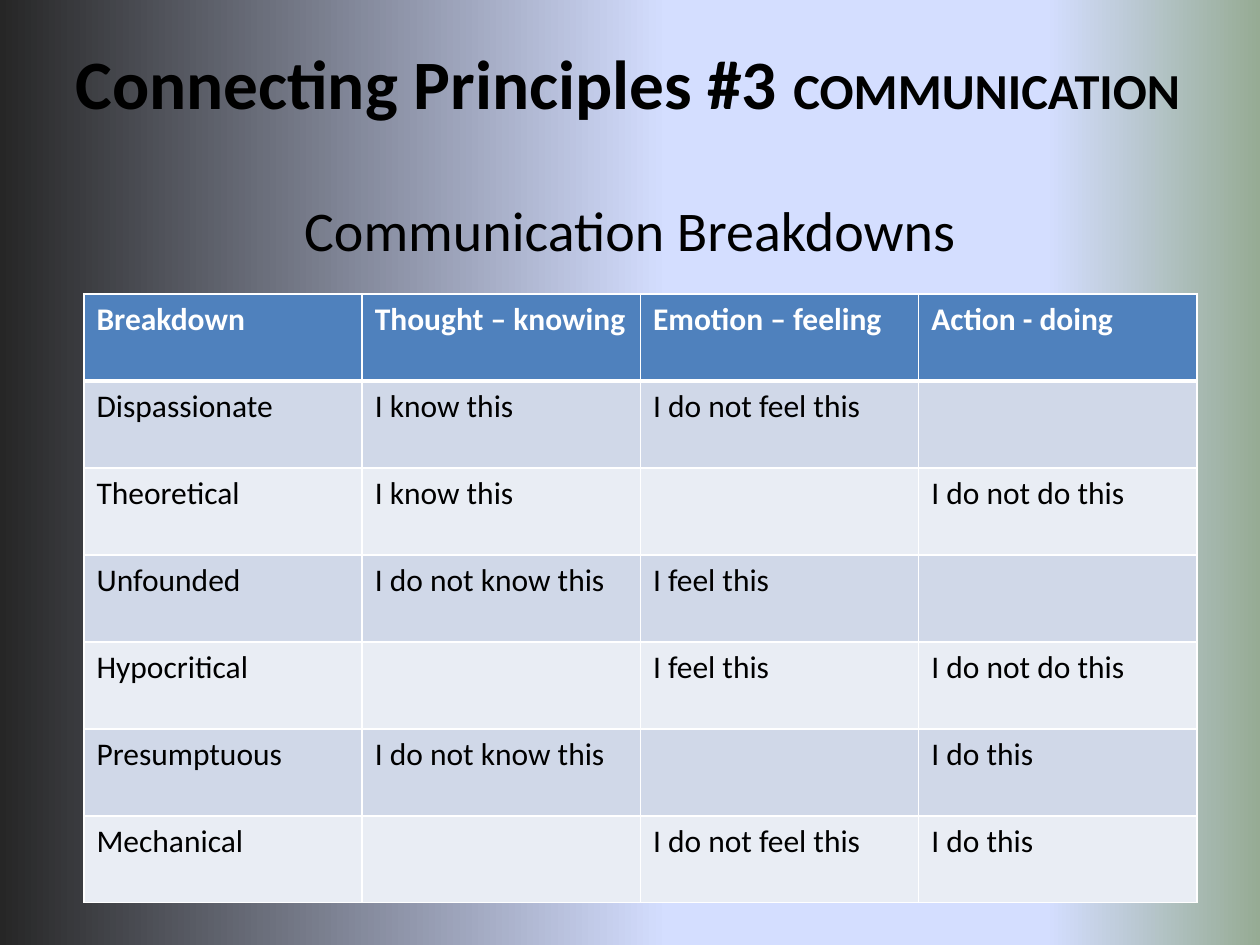
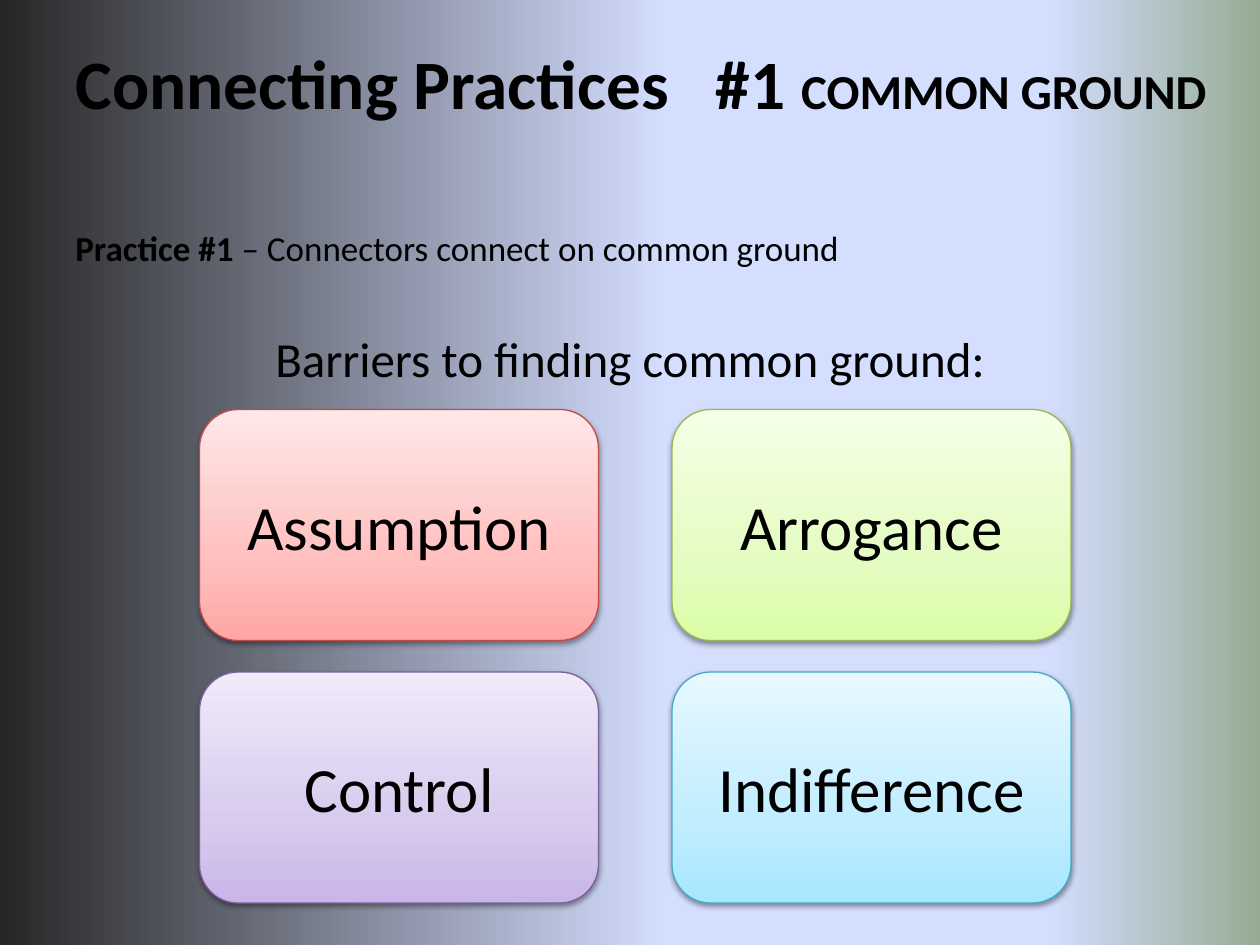
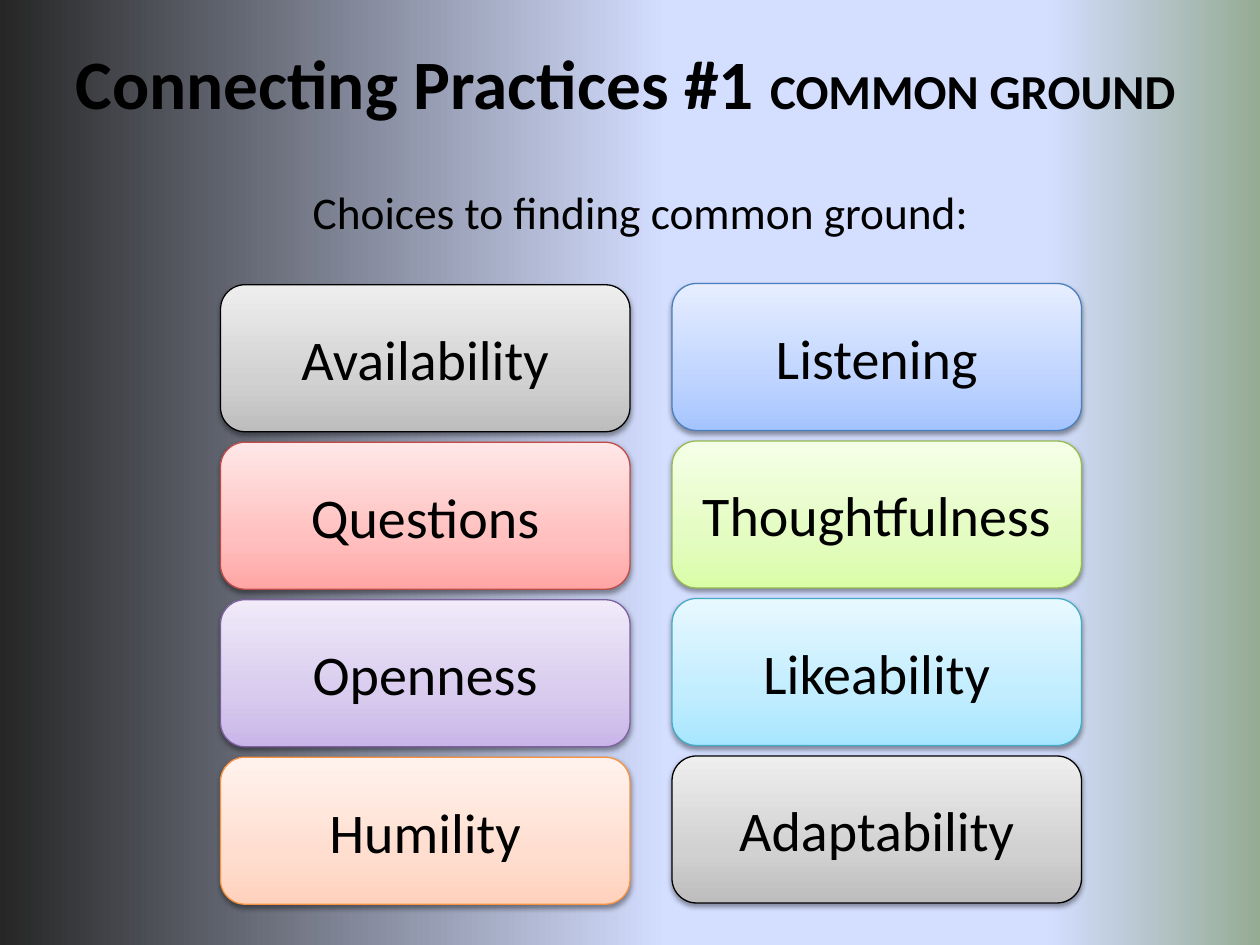
import collections

import pptx
import pptx.dml.color
import pptx.enum.shapes
import pptx.enum.text
import pptx.oxml
import pptx.oxml.ns
import pptx.util
from lxml import etree

# The slide is laid out on a grid of 120 columns by 90 rows.
COLUMNS, ROWS = 120, 90
UNIT = pptx.util.Inches(10) / COLUMNS

FONT = "Calibri"
BLACK, WHITE = "000000", "FFFFFF"
HEADER_FILL = "4F81BD"
BAND_FILLS = ("D0D8E8", "E9EDF4")
BACKDROP = ((0, "262626"), (53, "D4DEFF"), (83, "D4DEFF"), (100, "96AB94"))

Box = collections.namedtuple("Box", "left top width height")
Span = collections.namedtuple("Span", "text size bold", defaults=(False,))
Palette = collections.namedtuple("Palette", "dark middle light line")

GRAY = Palette("BDBDBD", "D1D1D1", "EEEEEE", "000000")
BLUE = Palette("A4C4FF", "BFD4FF", "E6EEFF", "4B7EBC")
RED = Palette("FFA6A5", "FFC0BF", "FFE7E7", "BF4C48")
GREEN = Palette("DAFDA7", "E4FCC2", "F5FFE7", "98B955")
PURPLE = Palette("C9B5E8", "D8CBEE", "F0EAF9", "7D60A0")
AQUA = Palette("A7E6FF", "C1EDFF", "E7F8FF", "46AAC5")
ORANGE = Palette("FFD2BD", "FFDED0", "FFF2ED", "F69240")

BREAKDOWNS = (
    ("Breakdown", "Thought – knowing", "Emotion – feeling", "Action - doing"),
    ("Dispassionate", "I know this", "I do not feel this", ""),
    ("Theoretical", "I know this", "", "I do not do this"),
    ("Unfounded", "I do not know this", "I feel this", ""),
    ("Hypocritical", "", "I feel this", "I do not do this"),
    ("Presumptuous", "I do not know this", "", "I do this"),
    ("Mechanical", "", "I do not feel this", "I do this"),
)


def color(value):
    return pptx.dml.color.RGBColor.from_string(value)


def lengths(box):
    """Turn a box in grid units into slide lengths."""
    return [round(value * UNIT) for value in box]


def drawing_xml(markup):
    """Parse one drawing element whose root carries the a: prefix."""
    name, rest = markup[1:].split(" ", 1)
    return pptx.oxml.parse_xml(f"<{name} {pptx.oxml.ns.nsdecls('a')} {rest}")


def set_gradient(fill, parent, stops, angle):
    fill.gradient()
    gradient = next(parent.iter(pptx.oxml.ns.qn("a:gradFill")))
    for child in list(gradient):
        gradient.remove(child)
    stop_list = etree.SubElement(gradient, pptx.oxml.ns.qn("a:gsLst"))
    for position, value in stops:
        stop_list.append(drawing_xml(
            f'<a:gs pos="{position * 1000}"><a:srgbClr val="{value}"/></a:gs>'))
    gradient.append(drawing_xml(f'<a:lin ang="{angle * 60000}" scaled="0"/>'))


def format_run(run, size, bold=False, value=BLACK):
    run.font.name = FONT
    run.font.size = pptx.util.Pt(size)
    run.font.bold = bold
    run.font.color.rgb = color(value)


def add_spans(paragraph, spans):
    for span in spans:
        run = paragraph.add_run()
        run.text = span.text
        format_run(run, span.size, span.bold)


def add_text(slide, box):
    """Add an empty wrapping text box and return its text frame."""
    text_frame = slide.shapes.add_textbox(*lengths(box)).text_frame
    text_frame.word_wrap = True
    return text_frame


def add_title(slide, box, heading, topic, topic_size, tab=None):
    text_frame = add_text(slide, box)
    text_frame.vertical_anchor = pptx.enum.text.MSO_ANCHOR.MIDDLE
    paragraph = text_frame.paragraphs[0]
    add_spans(paragraph, (Span(heading, 39.6, True), Span(topic, topic_size, True)))
    if tab:
        tabs = drawing_xml(f'<a:tabLst ><a:tab pos="{round(tab * UNIT)}" algn="l"/></a:tabLst>')
        paragraph._p.get_or_add_pPr().append(tabs)


def add_centered_line(paragraph, text, size):
    paragraph.alignment = pptx.enum.text.PP_ALIGN.CENTER
    add_spans(paragraph, (Span(text, size),))


def set_cell_borders(cell, widths):
    """Draw white borders, with widths in points by side letter."""
    properties = cell._tc.get_or_add_tcPr()
    for index, side in enumerate("LRTB"):
        properties.insert(index, drawing_xml(
            f'<a:ln{side} w="{pptx.util.Pt(widths.get(side, 1))}"><a:solidFill>'
            f'<a:srgbClr val="{WHITE}"/></a:solidFill></a:ln{side}>'))


def add_breakdown_table(slide, box, rows):
    table = slide.shapes.add_table(len(rows), len(rows[0]), *lengths(box)).table
    for column in table.columns:
        column.width = round(box.width * UNIT / len(rows[0]))
    for row_index, texts in enumerate(rows):
        header = row_index == 0
        table.rows[row_index].height = round(box.height * UNIT / len(rows))
        for cell, text in zip(table.rows[row_index].cells, texts):
            cell.fill.solid()
            cell.fill.fore_color.rgb = color(
                HEADER_FILL if header else BAND_FILLS[(row_index - 1) % 2])
            set_cell_borders(cell, {0: {"B": 3}, 1: {"T": 3}}.get(row_index, {}))
            cell.text_frame.text = text
            for run in cell.text_frame.paragraphs[0].runs:
                format_run(run, 18, header, WHITE if header else BLACK)


def add_card(slide, box, text, size, palette):
    shape = slide.shapes.add_shape(
        pptx.enum.shapes.MSO_SHAPE.ROUNDED_RECTANGLE, *lengths(box))
    stops = ((0, palette.dark), (35, palette.middle), (100, palette.light))
    set_gradient(shape.fill, shape._element.spPr, stops, 270)
    shape.line.color.rgb = color(palette.line)
    shape.line.width = pptx.util.Pt(0.75)
    shape.shadow.inherit = False
    effects = shape._element.spPr.find(pptx.oxml.ns.qn("a:effectLst"))
    effects.append(drawing_xml(
        f'<a:outerShdw blurRad="{pptx.util.Pt(3.1)}" dist="{pptx.util.Pt(1.6)}" '
        f'dir="5400000" rotWithShape="0"><a:srgbClr val="{BLACK}">'
        '<a:alpha val="38000"/></a:srgbClr></a:outerShdw>'))
    text_frame = shape.text_frame
    text_frame.word_wrap = True
    text_frame.vertical_anchor = pptx.enum.text.MSO_ANCHOR.MIDDLE
    add_centered_line(text_frame.paragraphs[0], text, size)


def add_card_column(slide, box, gap, size, cards):
    """Stack equal cards down the box, with the gap between them."""
    height = (box.height - gap * (len(cards) - 1)) / len(cards)
    for index, (text, palette) in enumerate(cards):
        top = box.top + index * (height + gap)
        add_card(slide, Box(box.left, top, box.width, height), text, size, palette)


def add_slide(presentation):
    slide = presentation.slides.add_slide(presentation.slide_layouts[6])
    set_gradient(slide.background.fill, slide._element, BACKDROP, 0)
    return slide


def build_breakdowns(slide):
    subtitle = add_text(slide, Box(6, 18, 108, 7))
    add_centered_line(subtitle.paragraphs[0], "Communication Breakdowns", 32)
    add_title(slide, Box(6, 3.6, 111, 8.4), "Connecting Principles #3 ", "COMMUNICATION", 28.8)
    add_breakdown_table(slide, Box(8, 28, 106, 58), BREAKDOWNS)


def build_barriers(slide):
    body = add_text(slide, Box(6, 21, 108, 18))
    add_spans(body.paragraphs[0], (
        Span("Practice #1", 20, True), Span(" – Connectors connect on common ground", 20)))
    barriers = body.add_paragraph()
    barriers.space_before = pptx.util.Pt(34)
    add_centered_line(barriers, "Barriers to finding common ground:", 28)
    add_title(slide, Box(6, 3.6, 112, 8.4), "Connecting Practices\t#1 ", "COMMON GROUND", 27.9, tab=61)
    add_card_column(slide, Box(19, 39, 38, 47), 3, 36, (
        ("Assumption", RED), ("Control", PURPLE)))
    add_card_column(slide, Box(64, 39, 38, 47), 3, 36, (
        ("Arrogance", GREEN), ("Indifference", AQUA)))


def build_choices(slide):
    subtitle = add_text(slide, Box(4, 17, 114, 6))
    add_centered_line(subtitle.paragraphs[0], "Choices to finding common ground:", 25.9)
    add_title(slide, Box(6, 3.6, 112, 8.4), "Connecting Practices #1 ", "COMMON GROUND", 27.9)
    add_card_column(slide, Box(21, 27.12, 39, 59), 1, 32, (
        ("Availability", GRAY), ("Questions", RED),
        ("Openness", PURPLE), ("Humility", ORANGE)))
    add_card_column(slide, Box(64, 27, 39, 59), 1, 32, (
        ("Listening", BLUE), ("Thoughtfulness", GREEN),
        ("Likeability", AQUA), ("Adaptability", GRAY)))


def main():
    presentation = pptx.Presentation()
    presentation.slide_width = round(COLUMNS * UNIT)
    presentation.slide_height = round(ROWS * UNIT)
    for build in (build_breakdowns, build_barriers, build_choices):
        build(add_slide(presentation))
    presentation.save("out.pptx")


if __name__ == "__main__":
    main()
